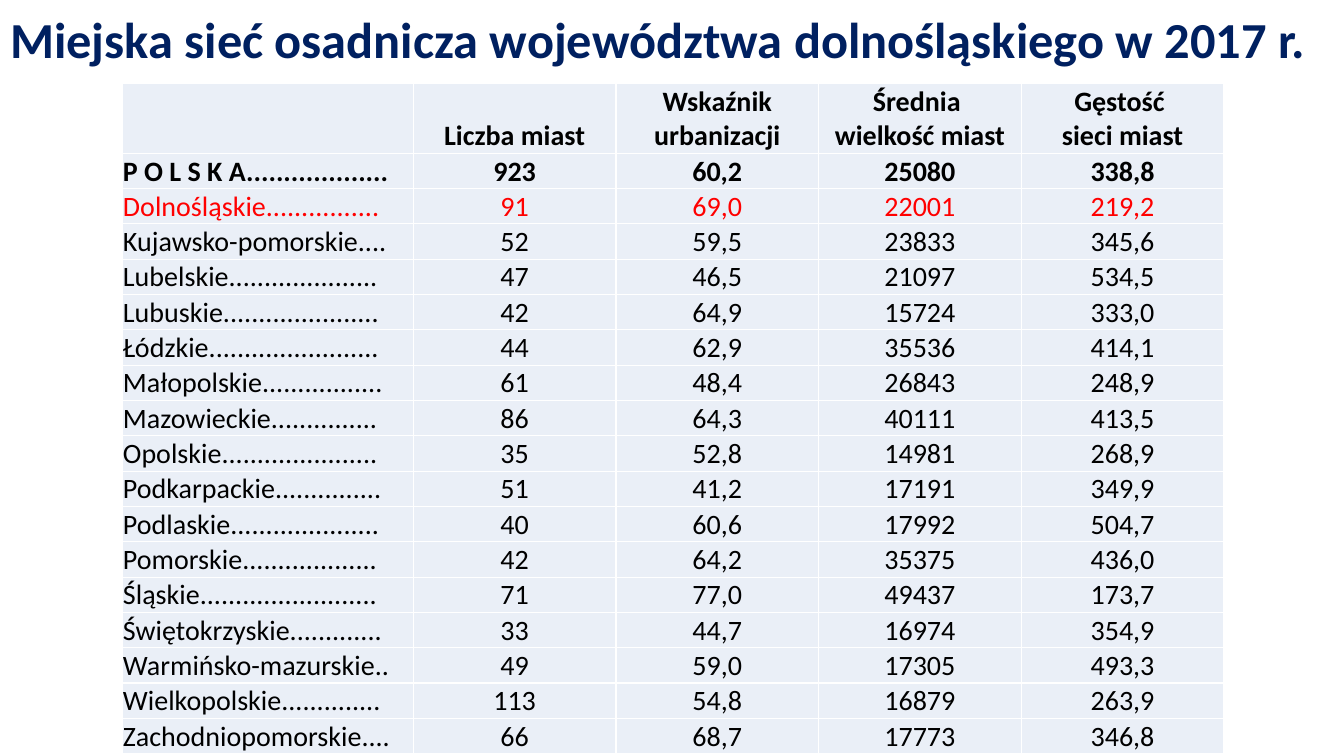
from dataclasses import dataclass

import lxml.etree
import pptx
import pptx.dml.color
import pptx.enum.text
import pptx.oxml.ns
import pptx.presentation
import pptx.slide
import pptx.table
import pptx.text.text
import pptx.util

Inches = pptx.util.Inches
Align = pptx.enum.text.PP_ALIGN
Anchor = pptx.enum.text.MSO_ANCHOR

FONT = "Calibri"
NAVY = "002060"
BLACK = "000000"
RED = "FF0000"
WHITE = "FFFFFF"
PALE_BLUE = "EAEFF7"

TITLE = "Miejska sieć osadnicza województwa dolnośląskiego w 2017 r."
COLUMN_WIDTHS = [2.89] + [2.01] * 4
HEADER_HEIGHT = 0.6
REGION_HEIGHT = 0.2


@dataclass(frozen=True)
class TableRow:
    label: str
    values: tuple[str, str, str, str]
    color: str = BLACK
    bold: bool = False


ROWS = [
    TableRow("", ("Liczba miast", "Wskaźnik urbanizacji", "Średnia \vwielkość miast",
                  "Gęstość \vsieci miast"), bold=True),
    TableRow("P O L S K A...................", ("923", "60,2", "25080", "338,8"), bold=True),
    TableRow("Dolnośląskie................", ("91", "69,0", "22001", "219,2"), color=RED),
    TableRow("Kujawsko-pomorskie....", ("52", "59,5", "23833", "345,6")),
    TableRow("Lubelskie.....................", ("47", "46,5", "21097", "534,5")),
    TableRow("Lubuskie......................", ("42", "64,9", "15724", "333,0")),
    TableRow("Łódzkie........................", ("44", "62,9", "35536", "414,1")),
    TableRow("Małopolskie.................", ("61", "48,4", "26843", "248,9")),
    TableRow("Mazowieckie...............", ("86", "64,3", "40111", "413,5")),
    TableRow("Opolskie......................", ("35", "52,8", "14981", "268,9")),
    TableRow("Podkarpackie...............", ("51", "41,2", "17191", "349,9")),
    TableRow("Podlaskie.....................", ("40", "60,6", "17992", "504,7")),
    TableRow("Pomorskie...................", ("42", "64,2", "35375", "436,0")),
    TableRow("Śląskie.........................", ("71", "77,0", "49437", "173,7")),
    TableRow("Świętokrzyskie.............", ("33", "44,7", "16974", "354,9")),
    TableRow("Warmińsko-mazurskie..", ("49", "59,0", "17305", "493,3")),
    TableRow("Wielkopolskie..............", ("113", "54,8", "16879", "263,9")),
    TableRow("Zachodniopomorskie....", ("66", "68,7", "17773", "346,8")),
]


def rgb(color: str) -> pptx.dml.color.RGBColor:
    return pptx.dml.color.RGBColor.from_string(color)


def set_font(font: pptx.text.text.Font, size: float, color: str, bold: bool) -> None:
    font.name = FONT
    font.size = pptx.util.Pt(size)
    font.bold = bold
    font.color.rgb = rgb(color)


def add_borders(cell: pptx.table._Cell, color: str, width: float) -> None:
    qn = pptx.oxml.ns.qn
    properties = cell._tc.get_or_add_tcPr()
    for side in ("a:lnL", "a:lnR", "a:lnT", "a:lnB"):
        border = lxml.etree.SubElement(properties, qn(side), w=str(pptx.util.Pt(width)))
        fill = lxml.etree.SubElement(border, qn("a:solidFill"))
        lxml.etree.SubElement(fill, qn("a:srgbClr"), val=color)


def fill_cell(cell: pptx.table._Cell, text: str, row: TableRow, align: Align) -> None:
    cell.margin_left = cell.margin_right = cell.margin_top = Inches(0.01)
    cell.margin_bottom = 0
    cell.vertical_anchor = Anchor.BOTTOM
    add_borders(cell, WHITE, 1)
    cell.fill.solid()
    cell.fill.fore_color.rgb = rgb(PALE_BLUE)
    cell.text = text
    paragraph = cell.text_frame.paragraphs[0]
    paragraph.alignment = align
    set_font(paragraph.font, 20, row.color, row.bold)


def add_title(slide: pptx.slide.Slide, text: str) -> None:
    title = slide.shapes.title
    title.left, title.top = 0, 0
    title.width, title.height = Inches(13.33), Inches(0.83)
    title.text = text
    title.text_frame.auto_size = pptx.enum.text.MSO_AUTO_SIZE.NONE
    title.text_frame.vertical_anchor = Anchor.MIDDLE
    paragraph = title.text_frame.paragraphs[0]
    paragraph.alignment = Align.LEFT
    paragraph.line_spacing = 0.9
    set_font(paragraph.font, 36, NAVY, True)


def add_town_table(slide: pptx.slide.Slide, rows: list[TableRow]) -> None:
    height = Inches(6.48)
    frame = slide.shapes.add_table(len(rows), len(COLUMN_WIDTHS), Inches(1.21), Inches(0.83),
                                   Inches(sum(COLUMN_WIDTHS)), height)
    table = frame.table
    table.first_row = table.horz_banding = False
    for column, width in zip(table.columns, COLUMN_WIDTHS):
        column.width = Inches(width)
    for index, row in enumerate(rows):
        table.rows[index].height = Inches(REGION_HEIGHT if index else HEADER_HEIGHT)
        for position, text in enumerate((row.label, *row.values)):
            align = Align.CENTER if position else Align.LEFT
            fill_cell(table.cell(index, position), text, row, align)
    frame.height = height


def main() -> None:
    deck = pptx.Presentation()
    deck.slide_width, deck.slide_height = Inches(13.33), Inches(7.5)
    slide = deck.slides.add_slide(deck.slide_layouts[5])
    add_title(slide, TITLE)
    add_town_table(slide, ROWS)
    deck.save("out.pptx")


if __name__ == "__main__":
    main()
